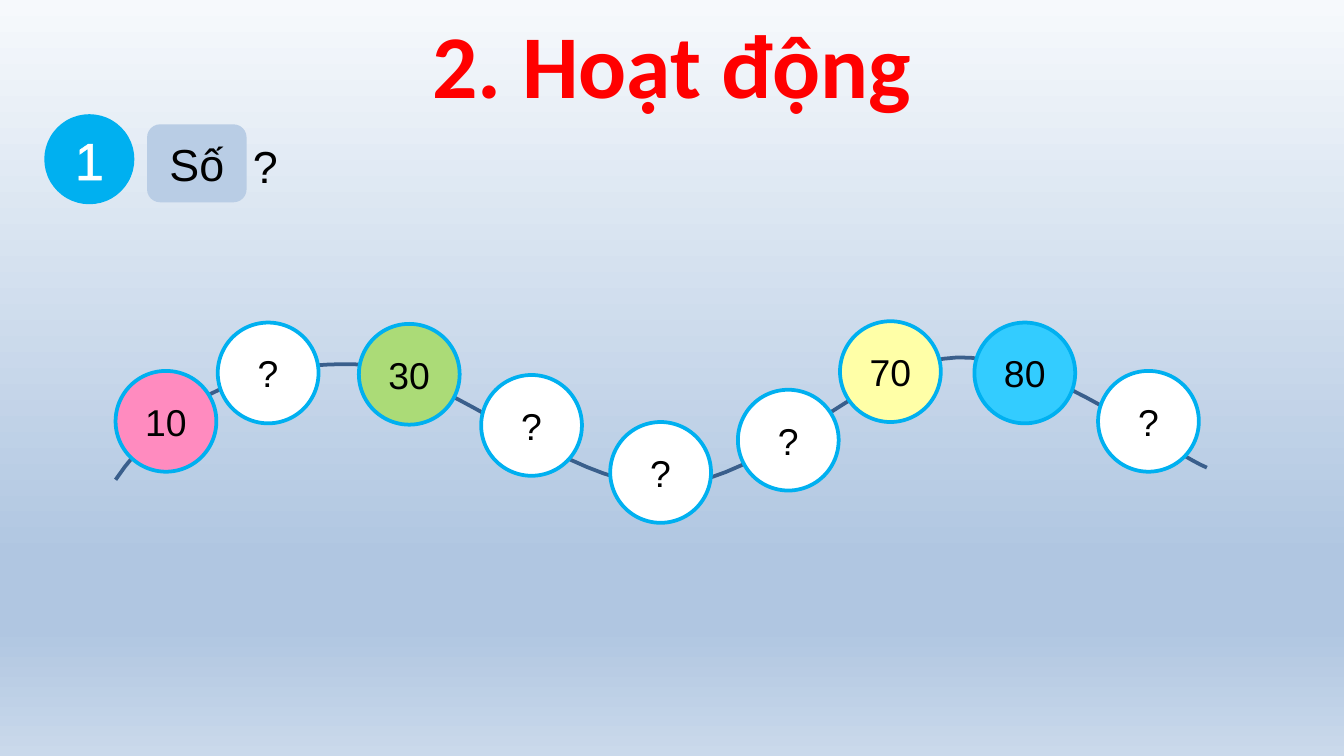
import copy

import pptx
import pptx.dml.color
import pptx.enum.shapes
import pptx.enum.text
import pptx.oxml.ns
import pptx.util
from lxml import etree

RGBColor = pptx.dml.color.RGBColor
Shape = pptx.enum.shapes.MSO_SHAPE
qn = pptx.oxml.ns.qn

RED = RGBColor(0xFF, 0x00, 0x00)
BLACK = RGBColor(0x00, 0x00, 0x00)
WHITE = RGBColor(0xFF, 0xFF, 0xFF)
BRIGHT_BLUE = RGBColor(0x00, 0xB0, 0xF0)
PALE_BLUE = RGBColor(0xB9, 0xCD, 0xE5)
STRING_BLUE = RGBColor(0x3A, 0x5F, 0x8C)
PINK = RGBColor(0xFF, 0x8B, 0xBF)
GREEN = RGBColor(0xAB, 0xDB, 0x77)
YELLOW = RGBColor(0xFF, 0xFF, 0xA7)
SKY = RGBColor(0x33, 0xCC, 0xFF)
SKY_STOPS = [
    (0, RGBColor(0xF6, 0xF9, 0xFC)),
    (0.74, RGBColor(0xB0, 0xC6, 0xE1)),
    (0.83, RGBColor(0xB0, 0xC6, 0xE1)),
    (1, RGBColor(0xCA, 0xD9, 0xEB)),
]

# The slide is a 16:9 grid of square cells, 100 columns wide
COLUMNS, ROWS = 100, 56.25
CELL = pptx.util.Inches(0.1)

BEAD_SIZE = 7.5
# Column, row, number and colour of each bead within the chain
BEADS = [
    (0, 3.7, "10", PINK),
    (7.6, 0.1, "?", WHITE),
    (18.1, 0.2, "30", GREEN),
    (27.2, 4, "?", WHITE),
    (36.8, 7.5, "?", WHITE),
    (46.3, 5.1, "?", WHITE),
    (53.9, 0, "70", YELLOW),
    (63.9, 0.1, "80", SKY),
    (73.1, 3.7, "?", WHITE),
]
# Start of the string, then two handles and an end for each curve
STRING_START = (0, 11.8)
STRING_CURVES = [
    ((4.5, 5.2), (10.8, 3.1), (17.7, 3.2)),
    ((24.5, 3.3), (33.4, 12.3), (40.9, 12.2)),
    ((48.4, 12.2), (55.9, 2.9), (62.6, 2.7)),
    ((69.3, 2.5), (78.1, 9.6), (81.2, 10.9)),
]
CURVE_STEPS = 20


def cells(*lengths):
    return [round(length * CELL) for length in lengths]


def write(shape, text, size, color, font="Arial", bold=False):
    """Put one centred run in the middle of a shape."""
    frame = shape.text_frame
    frame.auto_size = pptx.enum.text.MSO_AUTO_SIZE.NONE
    frame.word_wrap = True
    frame.vertical_anchor = pptx.enum.text.MSO_ANCHOR.MIDDLE
    frame.margin_left = frame.margin_right = 0
    paragraph = frame.paragraphs[0]
    paragraph.alignment = pptx.enum.text.PP_ALIGN.CENTER
    run = paragraph.add_run()
    run.text = text
    run.font.name = font
    run.font.size = pptx.util.Pt(size)
    run.font.bold = bold
    run.font.color.rgb = color
    return run


def add_filled(slide, kind, box, fill, line=None):
    shape = slide.shapes.add_shape(kind, *cells(*box))
    shape.shadow.inherit = False
    shape.fill.solid()
    shape.fill.fore_color.rgb = fill
    if line is None:
        shape.line.fill.background()
    else:
        shape.line.color.rgb = line
        shape.line.width = pptx.util.Pt(2)
    return shape


def paint_background(slide):
    fill = slide.background.fill
    fill.gradient()
    fill.gradient_angle = 270
    stop_list = next(slide.element.iter(qn("a:gsLst")))
    while len(stop_list) < len(SKY_STOPS):
        stop_list.append(copy.deepcopy(stop_list[0]))
    for stop, (position, color) in zip(fill.gradient_stops, SKY_STOPS):
        stop.position = position
        stop.color.rgb = color


def add_heading(slide, box):
    heading = slide.shapes.title
    heading.left, heading.top, heading.width, heading.height = cells(*box)
    write(heading, "2. Hoạt động", 48, RED, "Calibri", True)


def add_exercise_label(slide, left, top, height):
    # Numbered badge, its digit thickened by a white outline
    badge = add_filled(slide, Shape.OVAL, (left, top + 0.9, 6.7, 6.7), BRIGHT_BLUE)
    digit = write(badge, "1", 28, WHITE)
    outline = etree.Element(qn("a:ln"), w=str(pptx.util.Pt(1.5)))
    paint = etree.SubElement(outline, qn("a:solidFill"))
    etree.SubElement(paint, qn("a:srgbClr"), val=str(WHITE))
    digit.font._element.insert(0, outline)

    # Word tile and question mark
    tile = add_filled(slide, Shape.ROUNDED_RECTANGLE,
                      (left + 7.65, top + 1.65, 7.4, 5.8), PALE_BLUE)
    write(tile, "Số", 24, BLACK)
    question = slide.shapes.add_textbox(*cells(left + 13.1, top, 6.7, height))
    write(question, "?", 24, BLACK)


def curve_points(start, curves):
    """Yield points along a run of cubic curves."""
    for first, second, end in curves:
        for step in range(1, CURVE_STEPS + 1):
            t = step / CURVE_STEPS
            u = 1 - t
            yield tuple(u**3 * a + 3 * u * u * t * b + 3 * u * t * t * c + t**3 * d
                        for a, b, c, d in zip(start, first, second, end))
        start = end


def add_number_chain(slide, left, top):
    # String behind the beads
    start = cells(left + STRING_START[0], top + STRING_START[1])
    builder = slide.shapes.build_freeform(*start)
    builder.add_line_segments(
        [cells(left + x, top + y) for x, y in curve_points(STRING_START, STRING_CURVES)],
        close=False)
    string = builder.convert_to_shape()
    string.shadow.inherit = False
    string.fill.background()
    string.line.color.rgb = STRING_BLUE
    string.line.width = pptx.util.Pt(2)

    # Beads
    for x, y, number, color in BEADS:
        box = (left + x, top + y, BEAD_SIZE, BEAD_SIZE)
        write(add_filled(slide, Shape.OVAL, box, color, BRIGHT_BLUE), number, 20, BLACK)


def main():
    deck = pptx.Presentation()
    deck.slide_width, deck.slide_height = cells(COLUMNS, ROWS)
    slide = deck.slides.add_slide(deck.slide_layouts.get_by_name("Title Only"))
    paint_background(slide)
    add_heading(slide, (5, 0, COLUMNS - 10, 9.4))
    add_exercise_label(slide, 3.3, 7.6, 9.4)
    add_number_chain(slide, 8.6, 23.9)
    deck.save("out.pptx")


if __name__ == "__main__":
    main()
